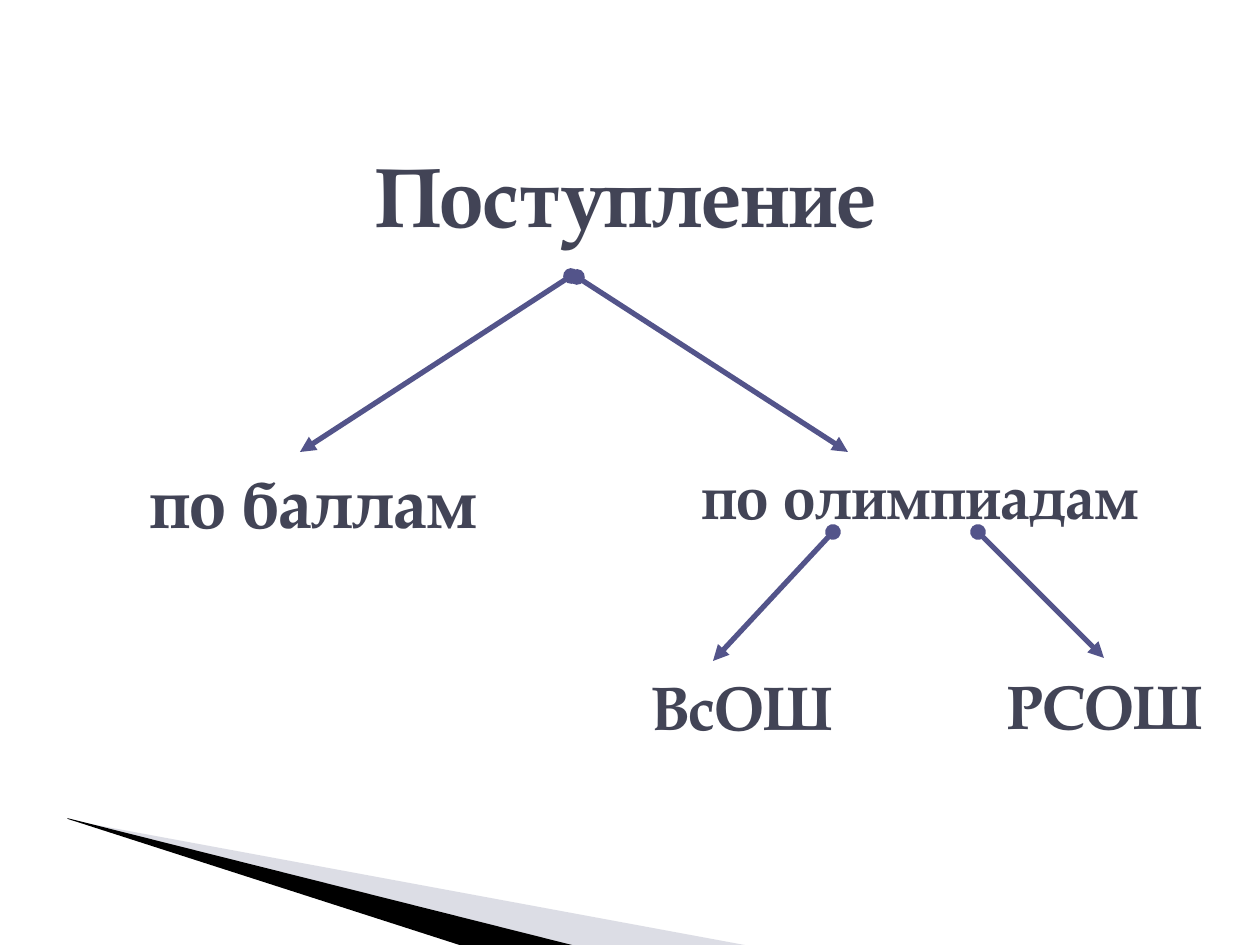
from dataclasses import dataclass
from typing import Any

from lxml.etree import SubElement as Sub
from pptx import Presentation as Deck
from pptx.dml.color import RGBColor as Rgb
from pptx.enum.shapes import MSO_CONNECTOR as Link
from pptx.enum.text import MSO_ANCHOR as Anchor, PP_ALIGN as Align
from pptx.oxml.ns import qn
from pptx.util import Pt

SCALE = 914400 / 126
Point = tuple[int, int]


@dataclass(frozen=True)
class Theme:
    face: str = "TeX Gyre Pagella"
    ink: str = "424456"
    line: str = "53548A"
    pale: str = "A9AABF"
    dark: str = "000000"
    stroke: int = 3
    large: int = 48
    mid: int = 40
    small: int = 35


THEME = Theme()


@dataclass(frozen=True)
class Wedge:
    points: tuple[Point, ...]
    color: str
    alpha: int = 100


@dataclass(frozen=True)
class Label:
    text: str
    box: tuple[int, int, int, int]
    size: int
    align: Align = Align.LEFT
    wrap: bool = True


@dataclass(frozen=True)
class Arrow:
    start: Point
    end: Point


WEDGES = (
    Wedge(((69, 820), (750, 946), (575, 946), (69, 819)), THEME.pale, 40),
    Wedge(((67, 818), (576, 946), (469, 948), (68, 819)), THEME.dark),
)
LABELS = (
    Label("Поступление", (129, 137, 994, 137), THEME.large, Align.CENTER),
    Label("по баллам", (137, 452, 433, 110), THEME.mid),
    Label("по олимпиадам", (689, 452, 498, 110), THEME.small),
    Label("ВсОШ", (639, 663, 215, 87), THEME.small, wrap=False),
    Label("РСОШ", (995, 662, 284, 87), THEME.small),
)
ARROWS = (
    Arrow((571, 276), (300, 452)),
    Arrow((577, 277), (848, 452)),
    Arrow((978, 532), (1104, 658)),
    Arrow((833, 532), (713, 661)),
)


def emu(px: int) -> int:
    return round(px * SCALE)


def apply(item: Any, form: dict[str, Any]) -> None:
    for key, value in form.items():
        setattr(item, key, value)


def draw_wedge(slide: Any, wedge: Wedge) -> None:
    first, *rest = wedge.points
    pen = slide.shapes.build_freeform(*first, scale=SCALE)
    pen.add_line_segments(rest, close=True)
    shape = pen.convert_to_shape()
    shape.shadow.inherit = False
    shape.line.fill.background()
    shape.fill.solid()
    shape.fill.fore_color.rgb = Rgb.from_string(wedge.color)
    if wedge.alpha < 100:
        tint = shape.fill._xPr.find(f".//{qn('a:srgbClr')}")
        Sub(tint, qn("a:alpha"), val=str(wedge.alpha * 1000))


def draw_label(slide: Any, label: Label) -> None:
    frame = slide.shapes.add_textbox(*map(emu, label.box)).text_frame
    apply(frame, {"word_wrap": label.wrap, "vertical_anchor": Anchor.TOP})
    para = frame.paragraphs[0]
    apply(para, {"text": label.text, "alignment": label.align})
    font = para.runs[0].font
    apply(font, {"name": THEME.face, "size": Pt(label.size), "bold": True})
    font.color.rgb = Rgb.from_string(THEME.ink)


def draw_arrow(slide: Any, arrow: Arrow) -> None:
    ends = map(emu, arrow.start + arrow.end)
    link = slide.shapes.add_connector(Link.STRAIGHT, *ends)
    link.line.width = Pt(THEME.stroke)
    link.line.color.rgb = Rgb.from_string(THEME.line)
    props = link._element.spPr
    for tag, kind in (("a:headEnd", "oval"), ("a:tailEnd", "triangle")):
        Sub(props.find(qn("a:ln")), qn(tag), type=kind)
    Sub(props, qn("a:effectLst"))


def main() -> None:
    deck = Deck()
    apply(deck, {"slide_width": emu(1260), "slide_height": emu(945)})
    slide = deck.slides.add_slide(deck.slide_layouts[6])
    for wedge in WEDGES:
        draw_wedge(slide, wedge)
    for label in LABELS:
        draw_label(slide, label)
    for arrow in ARROWS:
        draw_arrow(slide, arrow)
    deck.save("out.pptx")


if __name__ == "__main__":
    main()
